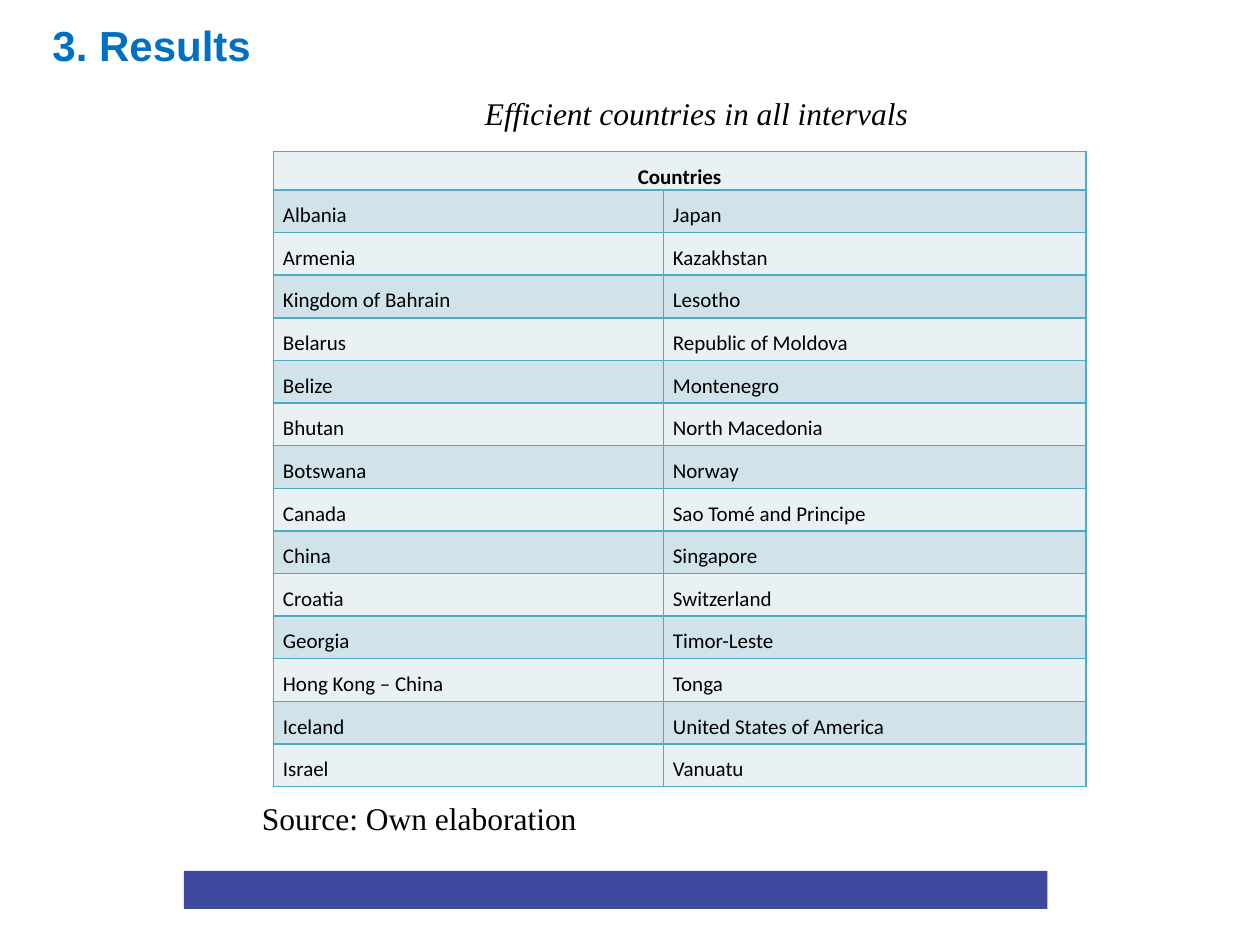
from lxml.etree import SubElement
from pptx import Presentation
from pptx.dml.color import RGBColor
from pptx.enum.shapes import MSO_SHAPE
from pptx.enum.text import MSO_ANCHOR, PP_ALIGN
from pptx.oxml.ns import qn
from pptx.util import Pt

PAIRS = [
    ("Albania", "Japan"),
    ("Armenia", "Kazakhstan"),
    ("Kingdom of Bahrain", "Lesotho"),
    ("Belarus", "Republic of Moldova"),
    ("Belize", "Montenegro"),
    ("Bhutan", "North Macedonia"),
    ("Botswana", "Norway"),
    ("Canada", "Sao Tomé and Principe"),
    ("China", "Singapore"),
    ("Croatia", "Switzerland"),
    ("Georgia", "Timor-Leste"),
    ("Hong Kong – China", "Tonga"),
    ("Iceland", "United States of America"),
    ("Israel", "Vanuatu"),
]
BANDS = ("E9F1F5", "D0E3EA")


def paint(fill, color):
    fill.solid()
    fill.fore_color.rgb = RGBColor.from_string(color)


def style(para, face, size, color, bold=False, italic=False):
    for run in para.runs:
        font = run.font
        font.name, font.size = face, Pt(size)
        font.bold, font.italic = bold, italic
        paint(font.fill, color)


def label(slide, box, text, face, size, color, **look):
    frame = slide.shapes.add_textbox(*map(Pt, box)).text_frame
    frame.word_wrap = True
    frame.text = text
    style(frame.paragraphs[0], face, size, color, **look)
    return frame


def title(slide, box):
    frame = label(slide, box, "3. Results ", "Arial", 24, "0070C0", bold=True)
    frame.vertical_anchor = MSO_ANCHOR.MIDDLE
    frame.paragraphs[0].alignment = PP_ALIGN.CENTER


def edge(cell, color):
    props = cell._tc.get_or_add_tcPr()
    for side in ("a:lnL", "a:lnR", "a:lnT", "a:lnB"):
        line = SubElement(props, qn(side), w=str(Pt(1)))
        fill = SubElement(line, qn("a:solidFill"))
        SubElement(fill, qn("a:srgbClr"), val=color)


def entry(cell, text, band, head):
    edge(cell, "4BACC6")
    paint(cell.fill, band)
    cell.margin_left = cell.margin_right = Pt(5.4)
    cell.margin_top = cell.margin_bottom = 0
    cell.text = text
    para = cell.text_frame.paragraphs[0]
    para.line_spacing = 1.5
    para.space_after = Pt(12)
    para.alignment = PP_ALIGN.CENTER if head else PP_ALIGN.LEFT
    style(para, "Calibri", 12, "000000", bold=head)


def listing(slide, box):
    left, top, width, height = box
    rows = [("Countries", "")] + PAIRS
    grid = slide.shapes.add_table(len(rows), 2, *map(Pt, box)).table
    grid.first_row = grid.horz_banding = False
    first = width * 0.48
    grid.columns[0].width = Pt(first)
    grid.columns[1].width = Pt(width - first)
    head = 21.7
    step = (height - head) / len(PAIRS)
    for i, pair in enumerate(rows):
        grid.rows[i].height = Pt(step if i else head)
        for j, text in enumerate(pair):
            entry(grid.cell(i, j), text, BANDS[i % 2], i == 0)
    grid.cell(0, 0).merge(grid.cell(0, 1))


def footer(slide, box):
    bar = slide.shapes.add_shape(MSO_SHAPE.RECTANGLE, *map(Pt, box))
    bar.shadow.inherit = False
    paint(bar.fill, "3D499D")
    bar.line.fill.background()


def main():
    deck = Presentation()
    deck.slide_width, deck.slide_height = Pt(720), Pt(540)
    slide = deck.slides.add_slide(deck.slide_layouts[6])
    listing(slide, (156.3, 86.6, 464.2, 362.6))
    title(slide, (-180, 0, 540, 51.2))
    serif = ("Times New Roman", 18, "000000")
    label(slide, (270, 50.4, 450, 29), "Efficient countries in all intervals",
          *serif, italic=True)
    label(slide, (142.6, 452.9, 450, 29), "Source: Own elaboration", *serif)
    footer(slide, (105.1, 497.6, 493.4, 21.8))
    deck.save("out.pptx")


if __name__ == "__main__":
    main()
